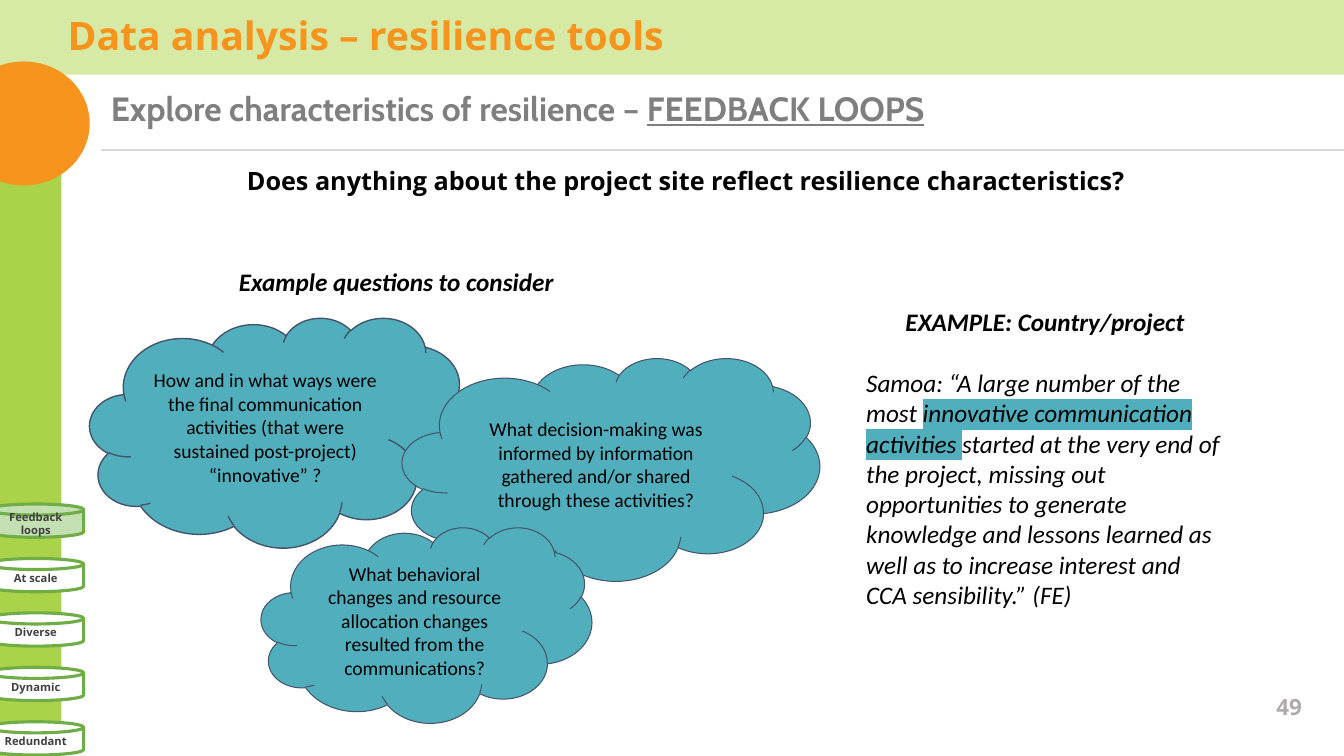
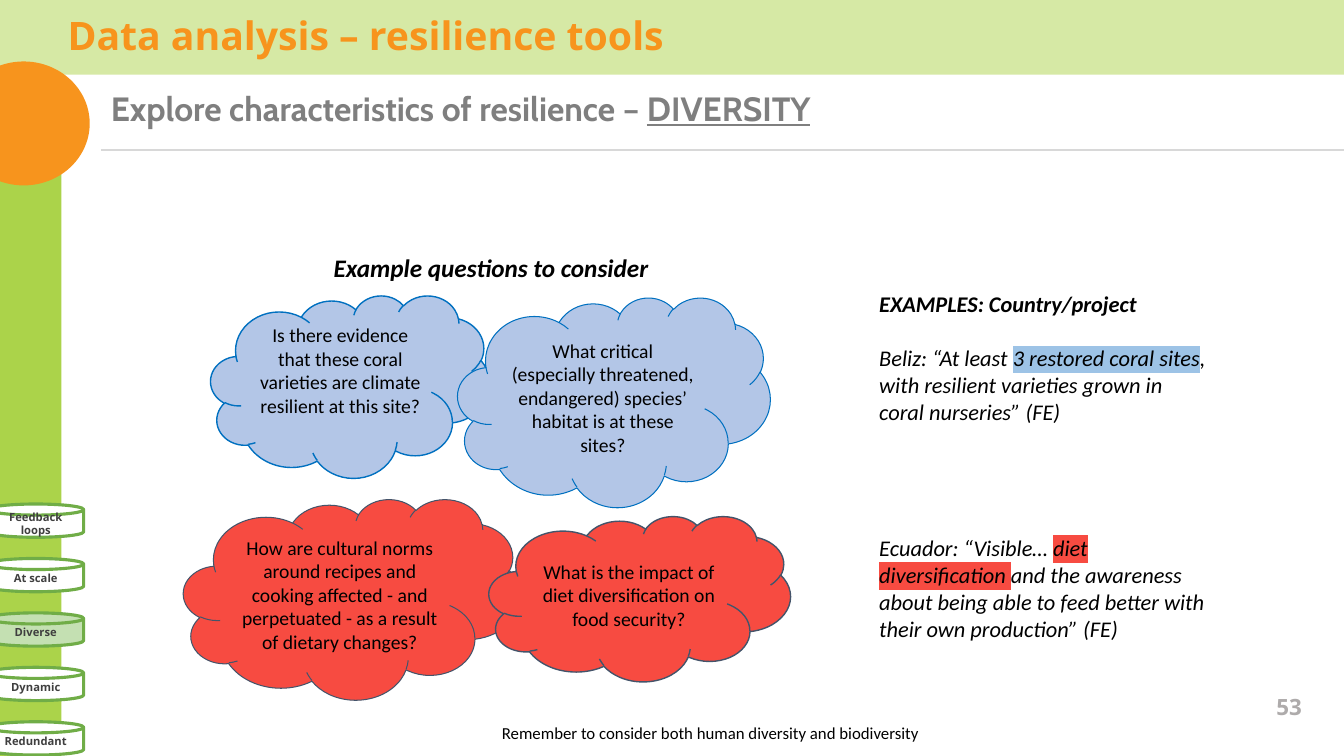
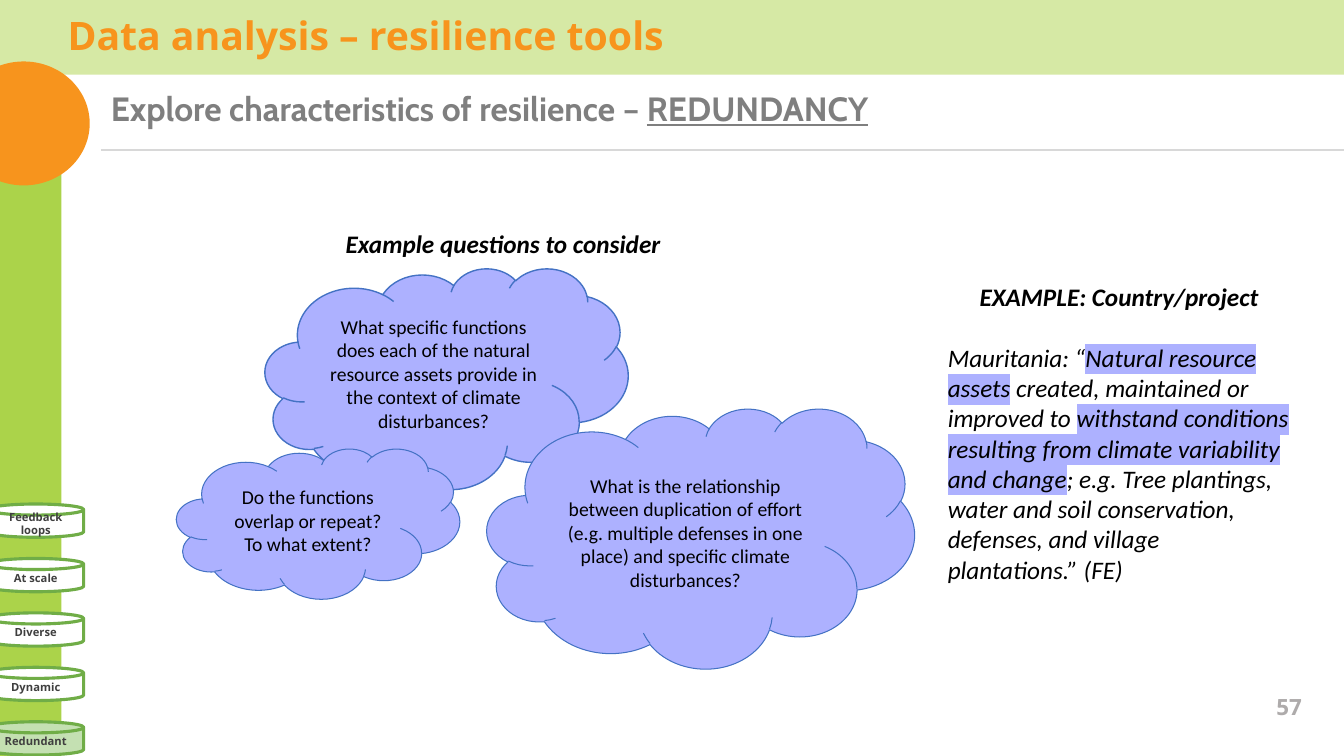
from lxml import etree
from pptx import Presentation
from pptx.dml.color import RGBColor
from pptx.enum.shapes import MSO_CONNECTOR, MSO_SHAPE
from pptx.enum.text import MSO_ANCHOR, MSO_AUTO_SIZE, PP_ALIGN
from pptx.oxml.ns import qn
from pptx.util import Pt

RECT, OVAL, CLOUD = MSO_SHAPE.RECTANGLE, MSO_SHAPE.OVAL, MSO_SHAPE.CLOUD
DRUM = MSO_SHAPE.FLOWCHART_DIRECT_ACCESS_STORAGE
LEFT, CENTER, RIGHT = PP_ALIGN.LEFT, PP_ALIGN.CENTER, PP_ALIGN.RIGHT
TOP, MIDDLE = MSO_ANCHOR.TOP, MSO_ANCHOR.MIDDLE

PX = 9144  # 100 px to the inch
ORANGE, GREEN, PALE_GREEN = "F7941D", "ABD34A", "D6E9A5"
DRUM_LINE, DRUM_ON, WHITE = "70AD47", "C4E0B2", "FFFFFF"
TEAL, SLATE, BLUE, RED, LILAC = "51AFBD", "44546A", "B3C6E7", "F74B41", "ADB1FF"
TRAITS = ["Feedback loops", "At scale", "Diverse", "Dynamic", "Redundant"]
DRUM_STEP = 54


def add_shape(s, kind, at, fill, line=None, width=1):
    sp = s.shapes.add_shape(kind, *(v * PX for v in at))
    sp.shadow.inherit = False
    sp.fill.solid()
    sp.fill.fore_color.rgb = RGBColor.from_string(fill)
    if line:
        sp.line.color.rgb = RGBColor.from_string(line)
        sp.line.width = Pt(width)
    else:
        sp.line.fill.background()
    return sp


def add_text(sp, text, size, color="000000", font="Calibri", bold=False, italic=False,
             align=LEFT, anchor=TOP, gap=0, spacing=1.0, underline=False, highlight=None):
    """Add one paragraph; in a list of parts, every second part is marked."""
    tf = sp.text_frame
    tf.word_wrap = True
    tf.auto_size = MSO_AUTO_SIZE.NONE
    tf.vertical_anchor = anchor
    p = tf.add_paragraph() if tf.text else tf.paragraphs[0]
    p.alignment, p.line_spacing, p.space_before = align, spacing, Pt(gap)
    for i, part in enumerate([text] if isinstance(text, str) else text):
        r = p.add_run()
        r.text = part
        r.font.size, r.font.bold, r.font.italic = Pt(size), bold, italic
        r.font.color.rgb = RGBColor.from_string(color)
        r.font.name = font
        if i % 2 and underline:
            r.font.underline = True
        if i % 2 and highlight:
            mark = etree.Element(qn("a:highlight"))
            etree.SubElement(mark, qn("a:srgbClr")).set("val", highlight)
            r.font.fill  # the mark follows the text fill
            r._r.get_or_add_rPr().insert(1, mark)
    return p


# Slide content: clouds are (position, fill, line, line width, text, space below)
# and quotes are (gap above, highlight, parts)
SLIDES = [
    dict(
        number="49", topic="FEEDBACK LOOPS", trait="Feedback loops",
        question="Does anything about the project site reflect resilience characteristics?",
        prompt_at=(227, 259, 346, 40),
        clouds=[
            ((89, 315, 375, 228), TEAL, SLATE, 1,
             "How and in what ways were the final communication activities "
             "(that were sustained post-project) “innovative” ?", 0),
            ((399, 355, 414, 221), TEAL, SLATE, 0.75,
             "What decision-making was informed by information gathered and/or "
             "shared through these activities?", 0),
            ((259, 523, 328, 194), TEAL, SLATE, 0.75,
             "What behavioral changes and resource allocation changes resulted "
             "from the communications?", 0),
        ],
        example_at=(849, 299, 375, 313), example_size=18,
        heading="EXAMPLE: Country/project", heading_align=CENTER,
        quotes=[
            (22, TEAL, [
                "Samoa: “A large number of the most ",
                "innovative communication activities ",
                "started at the very end of the project, missing out opportunities to "
                "generate knowledge and lessons learned as well as to increase "
                "interest and CCA sensibility.” (FE)"]),
        ],
    ),
    dict(
        number="53", topic="DIVERSITY", trait="Diverse",
        reminder="Remember to consider both human diversity and biodiversity",
        prompt_at=(321, 245, 377, 40),
        clouds=[
            ((209, 293, 277, 181), BLUE, "0070C0", 1,
             "Is there evidence that these coral varieties are climate resilient "
             "at this site?", 24),
            ((454, 295, 310, 208), BLUE, "0070C0", 0.75,
             "What critical (especially threatened, endangered) species’ habitat "
             "is at these sites?", 0),
            ((182, 495, 334, 199), RED, SLATE, 0.75,
             "How are cultural norms around recipes and cooking affected - and "
             "perpetuated - as a result of dietary changes?", 0),
            ((485, 512, 299, 164), RED, SLATE, 1,
             "What is the impact of diet diversification on food security?", 0),
        ],
        example_at=(862, 283, 348, 360), example_size=16,
        heading="EXAMPLES: Country/project", heading_align=LEFT,
        quotes=[
            (19.5, "9DC3E6", [
                "Beliz: “At least ", "3 restored coral sites",
                ", with resilient varieties grown in coral nurseries” (FE)"]),
            (78, RED, [
                "Ecuador: “Visible… ", "diet diversification ",
                "and the awareness about being able to feed better with their own "
                "production” (FE)"]),
        ],
    ),
    dict(
        number="57", topic="REDUNDANCY", trait="Redundant",
        prompt_at=(333, 222, 346, 40),
        clouds=[
            ((263, 266, 360, 219), LILAC, "4472C4", 1,
             "What specific functions does each of the natural resource assets "
             "provide in the context of climate disturbances?", 0),
            ((483, 405, 424, 258), LILAC, "4472C4", 0.75,
             "What is the relationship between duplication of effort (e.g. multiple "
             "defenses in one place) and specific climate disturbances?", 0),
            ((175, 445, 281, 149), LILAC, "4472C4", 0.75,
             "Do the functions overlap or repeat? To what extent?", 0),
        ],
        example_at=(930, 274, 360, 313), example_size=18,
        heading="EXAMPLE: Country/project", heading_align=CENTER,
        quotes=[
            (22, LILAC, [
                "Mauritania: “", "Natural resource assets",
                " created, maintained or improved to ",
                "withstand conditions resulting from climate variability and change",
                "; e.g. Tree plantings, water and soil conservation, defenses, and "
                "village plantations.” (FE)"]),
        ],
    ),
]

prs = Presentation()
prs.slide_width, prs.slide_height = 1333 * PX, 750 * PX

for page in SLIDES:
    s = prs.slides.add_slide(prs.slide_layouts[1])
    title, body = s.placeholders

    # Bands, circle and rule
    add_shape(s, RECT, (0, 0, 61, 750), GREEN)
    add_shape(s, RECT, (0, 0, 1333, 74), PALE_GREEN)
    add_shape(s, OVAL, (-42, 61, 131, 123), ORANGE)
    rule = s.shapes.add_connector(MSO_CONNECTOR.STRAIGHT, 100 * PX, 149 * PX, 1333 * PX, 149 * PX)
    rule.line.color.rgb = RGBColor.from_string("D8D8D8")
    rule.line.width = Pt(1.5)
    etree.SubElement(rule.element.spPr, qn("a:effectLst"))

    # Title and example placeholders, in front of the bands
    for sp, at in ((title, (57, 11, 1276, 64)), (body, page["example_at"])):
        sp.left, sp.top, sp.width, sp.height = (v * PX for v in at)
        s.shapes.element.append(sp.element)
    add_text(title, "Data analysis – resilience tools", 28, ORANGE, "Open Sans",
             bold=True, spacing=0.9)
    size = page["example_size"]
    add_text(body, page["heading"], size, bold=True, italic=True, align=page["heading_align"])
    for gap, color, parts in page["quotes"]:
        add_text(body, parts, size, italic=True, gap=gap, highlight=color)
    for p in body.text_frame.paragraphs:
        pPr = p._p.get_or_add_pPr()
        pPr.set("marL", "0")
        pPr.set("indent", "0")
        etree.SubElement(pPr, qn("a:buNone"))

    # Subtitle, headings and page number
    sp = s.shapes.add_textbox(*(v * PX for v in (100, 87, 1219, 46)))
    add_text(sp, ["Explore characteristics of resilience – ", page["topic"]], 24, "7F7F7F",
             "Cabin", bold=True, spacing=0.9, underline=True)
    sp = s.shapes.add_textbox(*(v * PX for v in page["prompt_at"]))
    add_text(sp, "Example questions to consider", 18, bold=True, italic=True)
    sp = s.shapes.add_textbox(*(v * PX for v in (1210, 681, 91, 40)))
    add_text(sp, page["number"], 16, "AEABAB", "Open Sans", bold=True, align=RIGHT, anchor=MIDDLE)
    if "question" in page:
        sp = s.shapes.add_textbox(*(v * PX for v in (235, 159, 1098, 40)))
        add_text(sp, page["question"], 18, font="Open Sans", bold=True)
    if "reminder" in page:
        sp = s.shapes.add_textbox(*(v * PX for v in (488, 712, 441, 30)))
        add_text(sp, page["reminder"], 12)

    # Question clouds
    for at, fill, line, width, text, below in page["clouds"]:
        sp = add_shape(s, CLOUD, at, fill, line, width)
        sp.text_frame.margin_bottom = (5 + below) * PX
        add_text(sp, text, 14, align=CENTER, anchor=MIDDLE)

    # Trait drums, with the current trait tinted
    for i, trait in enumerate(TRAITS):
        fill = DRUM_ON if trait == page["trait"] else WHITE
        drum = add_shape(s, DRUM, (19, 469 + i * DRUM_STEP, 33, 95), fill, DRUM_LINE, 2.25)
        drum.rotation = 270
        sp = s.shapes.add_textbox(*(v * PX for v in (-12, 511 + i * DRUM_STEP, 95, 17)))
        add_text(sp, trait, 8, "3F3F3F", "Open Sans", bold=True, align=CENTER, anchor=MIDDLE)

prs.save("out.pptx")
